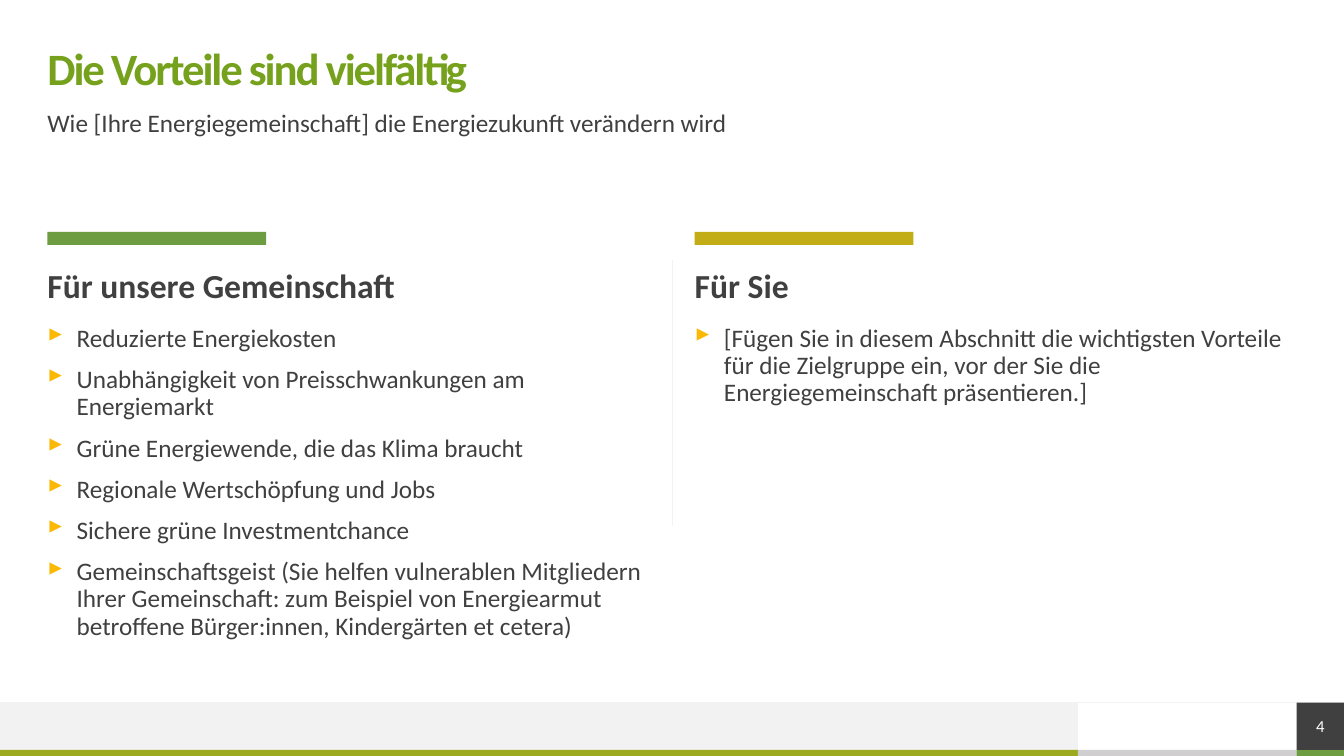
from dataclasses import dataclass

from lxml import etree
from pptx import Presentation
from pptx import util as u
from pptx.dml.color import RGBColor
from pptx.enum import shapes, text
from pptx.oxml.ns import qn


@dataclass(frozen=True)
class Theme:
    font: str = "Calibri"
    title: str = "75A11D"
    ink: str = "404040"
    white: str = "FFFFFF"
    pale: str = "F2F2F2"
    silver: str = "D0CECE"
    olive: str = "9CAA20"
    green: str = "6D9D40"
    gold: str = "C3AD16"
    bullet: str = "FBB804"
    title_size: int = 32
    heading_size: int = 24
    body_size: int = 18
    number_size: int = 12
    hairline: float = 0.5


T = Theme()
WIDTH, HEIGHT = 13.33, 7.5
MARGIN = 0.47
CONTENT_WIDTH = 12.4
COLUMN_WIDTH = 5.98
COLUMN_TOP = 2.3
INDENT = 0.29

COLUMNS = [
    (T.green, "Für unsere Gemeinschaft", [
        "Reduzierte Energiekosten",
        "Unabhängigkeit von Preisschwankungen am Energiemarkt",
        "Grüne Energiewende, die das Klima braucht",
        "Regionale Wertschöpfung und Jobs",
        "Sichere grüne Investmentchance",
        "Gemeinschaftsgeist (Sie helfen vulnerablen Mitgliedern Ihrer "
        "Gemeinschaft: zum Beispiel von Energiearmut betroffene "
        "Bürger:innen, Kindergärten et cetera)",
    ]),
    (T.gold, "Für Sie", [
        "[Fügen Sie in diesem Abschnitt die wichtigsten Vorteile für die "
        "Zielgruppe ein, vor der Sie die Energiegemeinschaft präsentieren.]",
    ]),
]


def rgb(color):
    return RGBColor.from_string(color)


def box(x, y, w, h):
    return [u.Inches(v) for v in (x, y, w, h)]


def add_bar(s, x, y, w, h, color):
    sp = s.shapes.add_shape(shapes.MSO_SHAPE.RECTANGLE, *box(x, y, w, h))
    sp.shadow.inherit = False
    sp.fill.solid()
    sp.fill.fore_color.rgb = rgb(color)
    sp.line.fill.background()
    return sp


def add_rule(s, x1, y1, x2, y2):
    line = s.shapes.add_connector(
        shapes.MSO_CONNECTOR.STRAIGHT, *box(x1, y1, x2, y2))
    line.line.color.rgb = rgb(T.pale)
    line.line.width = u.Pt(T.hairline)
    etree.SubElement(line._element.spPr, qn("a:effectLst"))


def clear_insets(tf):
    tf.margin_left = tf.margin_top = tf.margin_right = tf.margin_bottom = 0
    tf.word_wrap = True


def add_run(p, words, size, color, bold=False):
    r = p.add_run()
    r.text = words
    r.font.name = T.font
    r.font.size = u.Pt(size)
    r.font.bold = bold
    r.font.color.rgb = rgb(color)
    return r


def add_bullet(p):
    pPr = p._p.get_or_add_pPr()
    pPr.set("marL", str(u.Inches(INDENT)))
    pPr.set("indent", str(-u.Inches(INDENT)))
    color = etree.SubElement(pPr, qn("a:buClr"))
    etree.SubElement(color, qn("a:srgbClr"), val=T.bullet)
    etree.SubElement(pPr, qn("a:buChar"), char="▸")


def add_text(s, x, y, w, h, lines, size, color=T.ink, bold=False, bullets=False):
    tf = s.shapes.add_textbox(*box(x, y, w, h)).text_frame
    clear_insets(tf)
    for i, words in enumerate(lines):
        p = tf.add_paragraph() if i else tf.paragraphs[0]
        if bullets:
            add_bullet(p)
        p.line_spacing = 0.9
        p.space_before = u.Pt(10 if i else 0)
        add_run(p, words, size, color, bold)
    return tf


def add_header(s, x, y, w):
    tf = add_text(s, x, y, w, 0.47, ["Die Vorteile sind vielfältig"],
                  T.title_size, T.title, bold=True)
    tf.vertical_anchor = text.MSO_ANCHOR.MIDDLE
    tf.paragraphs[0].runs[0].font._element.set("spc", "-150")
    add_text(s, x, y + 0.63, w, 0.39,
             ["Wie [Ihre Energiegemeinschaft] die Energiezukunft verändern wird"],
             T.body_size)


def add_column(s, x, y, w, accent, heading, benefits):
    add_bar(s, x, y, 2.17, 0.13, accent)
    add_text(s, x, y + 0.37, w, 0.39, [heading], T.heading_size, bold=True)
    add_text(s, x, y + 0.93, w, 3.18, benefits, T.body_size, bullets=True)


def add_footer(s, x, y, w, h):
    strip = 0.06
    number = 0.47
    logo = 2.17
    main = w - number - logo
    band = h - strip
    add_bar(s, x, y, main, band, T.pale)
    left = x
    for width, color in ((main, T.olive), (logo, T.silver), (number, T.green)):
        add_bar(s, left, y + band, width, strip, color)
        left += width
    add_rule(s, x + w, y, x, y)
    sp = add_bar(s, x + w - number, y, number, band, T.ink)
    tf = sp.text_frame
    clear_insets(tf)
    tf.vertical_anchor = text.MSO_ANCHOR.MIDDLE
    p = tf.paragraphs[0]
    p.alignment = text.PP_ALIGN.CENTER
    add_run(p, "4", T.number_size, T.white)


def main():
    prs = Presentation()
    prs.slide_width, prs.slide_height = u.Inches(WIDTH), u.Inches(HEIGHT)
    s = prs.slides.add_slide(prs.slide_layouts[6])
    add_footer(s, 0, 6.97, WIDTH, 0.53)
    add_header(s, MARGIN, MARGIN, CONTENT_WIDTH)
    step = CONTENT_WIDTH - COLUMN_WIDTH
    for i, column in enumerate(COLUMNS):
        add_column(s, MARGIN + i * step, COLUMN_TOP, COLUMN_WIDTH, *column)
    add_rule(s, WIDTH / 2, 2.58, WIDTH / 2, 5.22)
    prs.save("out.pptx")


if __name__ == "__main__":
    main()
